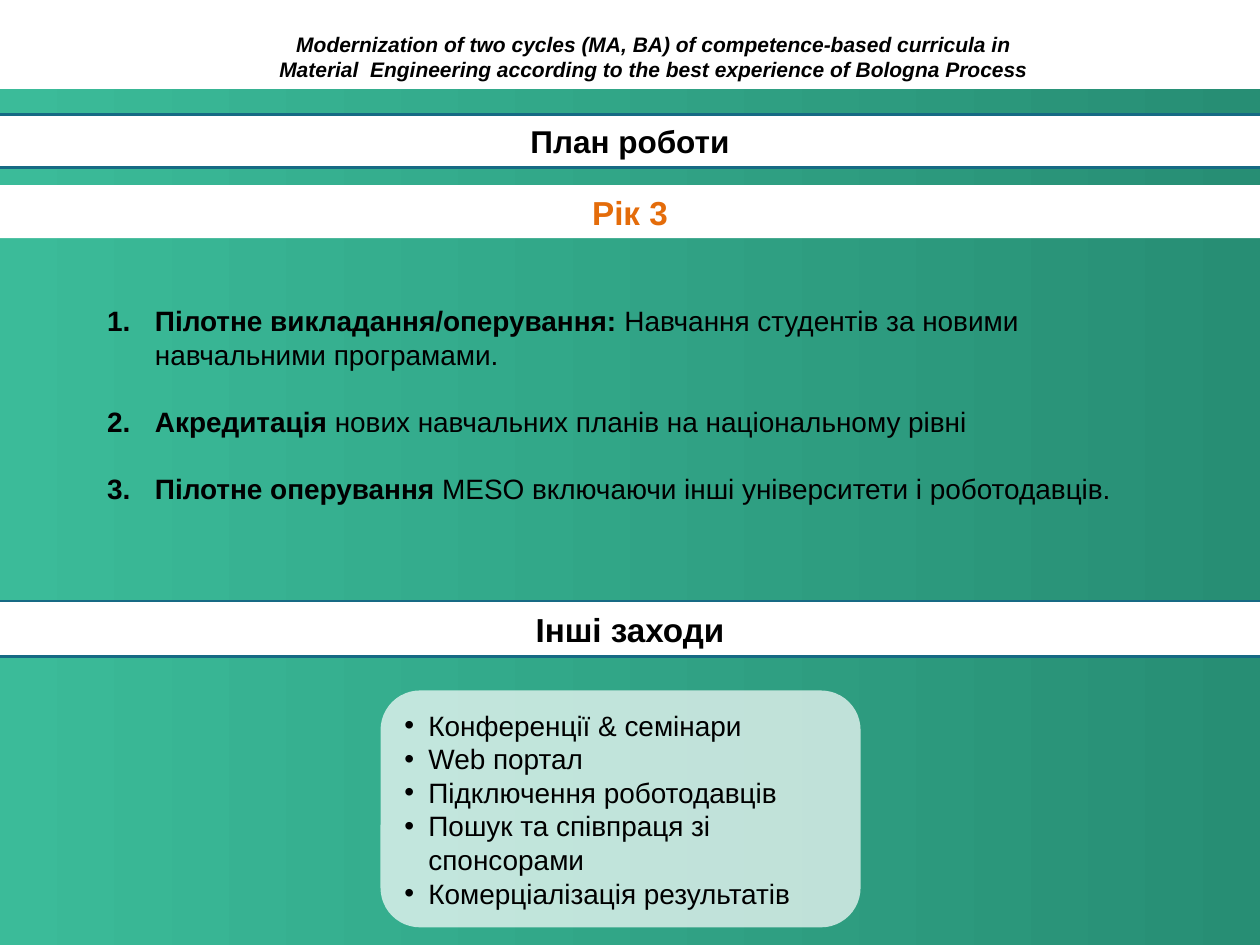
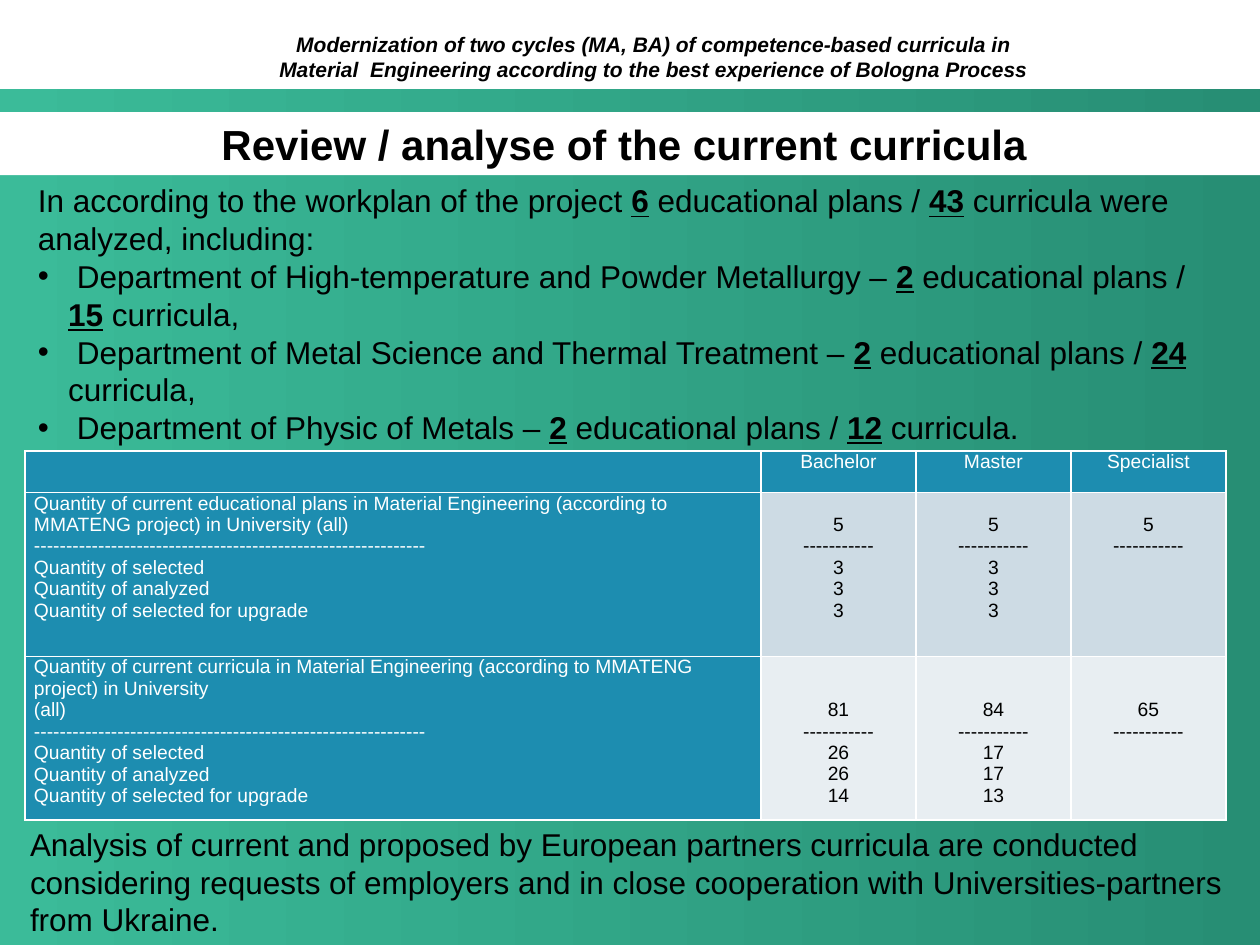
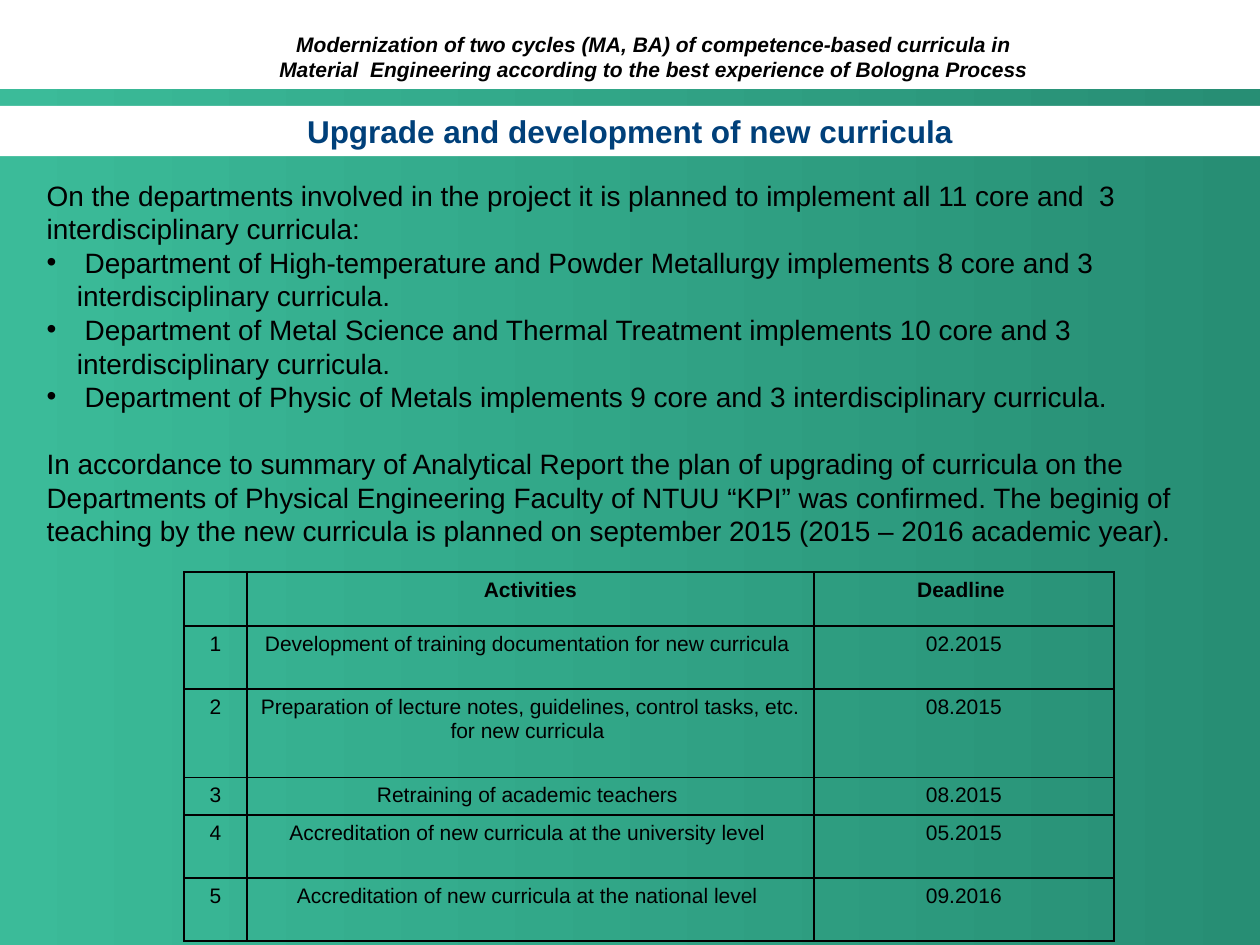
"""Builds three project slides about curricula in Material Engineering."""
from lxml import etree
from pptx import Presentation
from pptx.dml.color import RGBColor
from pptx.enum.shapes import MSO_SHAPE
from pptx.enum.text import MSO_ANCHOR, MSO_AUTO_SIZE, PP_ALIGN
from pptx.oxml.ns import qn
from pptx.util import Inches, Pt

RECTANGLE, ROUNDED = MSO_SHAPE.RECTANGLE, MSO_SHAPE.ROUNDED_RECTANGLE
LEFT, CENTER = PP_ALIGN.LEFT, PP_ALIGN.CENTER
TOP, MIDDLE = MSO_ANCHOR.TOP, MSO_ANCHOR.MIDDLE
NO_AUTOFIT = MSO_AUTO_SIZE.NONE
FONT = "Arial"
COLUMNS, ROWS = 100, 75
BLACK, WHITE, NAVY, ORANGE = "000000", "FFFFFF", "00407A", "E46C0A"
GREEN_START, GREEN_END, RULE = "3BBB99", "278E74", "166A84"
TABLE_BLUE, TABLE_GREY, TABLE_PALE = "1D8DB0", "CDDBE4", "E8EEF2"
PROJECT = ("Modernization of two cycles (MA, BA) of competence-based curricula in "
           "Material  Engineering according to the best experience of Bologna Process")
BULLETS = {"•": ("a:buChar", {"char": "•"}),
           "#": ("a:buAutoNum", {"type": "arabicPeriod"})}


def paint(color_holder, color):
    """Give a fill or a font colour its hex value."""
    if hasattr(color_holder, "solid"):
        color_holder.solid()
        color_holder = color_holder.fore_color
    color_holder.rgb = RGBColor.from_string(color)


def add_bullet(paragraph, mark, indent):
    """Set the bullet and hanging indent that belong to a mark."""
    properties = paragraph._p.get_or_add_pPr()
    hanging = Inches(indent) if mark else 0
    properties.set("marL", str(hanging))
    properties.set("indent", str(-hanging))
    if mark:
        etree.SubElement(properties, qn("a:buFont"), typeface=FONT)
    tag, attributes = BULLETS.get(mark, ("a:buNone", {}))
    etree.SubElement(properties, qn(tag), attributes)


def write(frame, paragraphs, size=16, color=BLACK, bold=False, italic=False,
          underline=False, align=LEFT, anchor=TOP, indent=0.24, gaps=None):
    """Write paragraphs; a leading • or # makes a list, *stars* mark emphasis."""
    frame.word_wrap = True
    frame.vertical_anchor = anchor
    for index, text in enumerate(paragraphs):
        paragraph = frame.paragraphs[0] if index == 0 else frame.add_paragraph()
        mark = text[:1] if text[:1] in BULLETS else ""
        add_bullet(paragraph, mark, indent)
        paragraph.alignment = align
        paragraph.space_before = Pt((gaps or {}).get(index, 0))
        for part, words in enumerate(text[len(mark):].split("*")):
            if not words:
                continue
            run = paragraph.add_run()
            run.text = words
            run.font.name, run.font.size = FONT, Pt(size)
            run.font.bold = bold or part % 2 == 1
            run.font.italic = italic
            run.font.underline = underline and part % 2 == 1
            paint(run.font.color, color)


def set_borders(cell, color):
    """Draw one-point lines round a cell."""
    properties = cell._tc.get_or_add_tcPr()
    for position, side in enumerate(("a:lnL", "a:lnR", "a:lnT", "a:lnB")):
        line = etree.Element(qn(side), w=str(Pt(1)))
        fill = etree.SubElement(line, qn("a:solidFill"))
        etree.SubElement(fill, qn("a:srgbClr"), val=color)
        properties.insert(position, line)


class Deck:
    """Holds the presentation style and the current slide."""

    def __init__(self):
        """Set the slide size and put the shared backdrop on the layout."""
        self.presentation = Presentation()
        self.presentation.slide_width = Inches(10)
        self.presentation.slide_height = Inches(7.5)
        self.layout = self.presentation.slide_layouts[1]
        self.new_slide()
        self.add_backdrop()

    def new_slide(self):
        """Start a slide."""
        self.slide = self.presentation.slides.add_slide(self.layout)

    def grid(self, left, top, width, height):
        """Turn grid columns and rows into lengths."""
        column = self.presentation.slide_width / COLUMNS
        row = self.presentation.slide_height / ROWS
        return [int(left * column), int(top * row), int(width * column), int(height * row)]

    def add_backdrop(self):
        """Move the green field and the project name to the layout."""
        field = self.shape((0, 7.1, 100, 68.1))
        field.fill.gradient()
        field.fill.gradient_angle = 0
        for stop, color in zip(field.fill.gradient_stops, (GREEN_START, GREEN_END)):
            paint(stop.color, color)
        header = self.text((20.1, 2, 63.6, 5.1), [PROJECT], size=12, bold=True,
                           italic=True, align=CENTER)
        for position, shape in enumerate((field, header), start=2):
            self.layout.shapes.element.insert(position, shape.element)

    def shape(self, area, kind=RECTANGLE, fill=WHITE, opacity=None):
        """Add a plain filled shape."""
        shape = self.slide.shapes.add_shape(kind, *self.grid(*area))
        shape.shadow.inherit = False
        paint(shape.fill, fill)
        shape.line.fill.background()
        if opacity:
            color = shape.fill._xPr.find(".//" + qn("a:srgbClr"))
            etree.SubElement(color, qn("a:alpha"), val=str(opacity * 1000))
        return shape

    def text(self, area, paragraphs, **style):
        """Add a text box."""
        box = self.slide.shapes.add_textbox(*self.grid(*area))
        write(box.text_frame, paragraphs, **style)
        return box

    def placeholder(self, index, area, paragraphs, **style):
        """Move a template placeholder and write in it."""
        shape = self.slide.placeholders[index]
        shape.left, shape.top, shape.width, shape.height = self.grid(*area)
        shape.text_frame.auto_size = NO_AUTOFIT
        write(shape.text_frame, paragraphs, **style)
        return shape

    def body(self, area, paragraphs, **style):
        """Fill the body placeholder."""
        self.placeholder(1, area, paragraphs, **style)

    def title(self, area, text, ruled=False, **style):
        """Fill the title placeholder as a white band."""
        band = self.placeholder(0, area, [text], bold=True, align=CENTER,
                                anchor=MIDDLE, **style)
        paint(band.fill, WHITE)
        self.rule(band, ruled)

    def band(self, area, text, ruled=False, **style):
        """Add a white heading band."""
        band = self.shape(area)
        write(band.text_frame, [text], bold=True, align=CENTER, anchor=MIDDLE, **style)
        self.rule(band, ruled)

    def rule(self, band, ruled):
        """Outline a band if it is ruled."""
        if ruled:
            paint(band.line.fill, RULE)
            band.line.width = Pt(1.5)

    def table(self, area, widths, heights, border):
        """Add an unstyled table and return it."""
        frame = self.slide.shapes.add_table(len(heights), len(widths), *self.grid(*area))
        table = frame.table
        table.first_row = table.horz_banding = False
        for column, width in zip(table.columns, widths):
            column.width = self.grid(width, 0, 0, 0)[0]
        for row, height in zip(table.rows, heights):
            row.height = self.grid(0, height, 0, 0)[1]
        for cell in table.iter_cells():
            cell.fill.background()
            set_borders(cell, border)
        return table


def add_work_plan(deck):
    """Build the work plan slide."""
    deck.title((-2, 9.1, 104, 4.2), "План роботи", ruled=True, size=18)
    deck.band((0, 14.7, 100, 4.2), "Рік 3", size=19, color=ORANGE)
    deck.body((7.5, 23.6, 86.6, 17.1), [
        "#*Пілотне викладання/оперування: *Навчання студентів за новими навчальними програмами.",
        "#*Акредитація *нових навчальних планів на національному рівні",
        "#*Пілотне оперування *MESO включаючи інші університети і роботодавців.",
    ], indent=0.38, gaps={1: 19.2, 2: 19.2})
    deck.band((-2, 47.7, 104, 4.4), "Інші заходи", ruled=True, size=19)
    events = deck.shape((30.2, 54.8, 38.1, 18.8), ROUNDED, opacity=70)
    write(events.text_frame, [
        "•Конференції & семінари", "•Web портал", "•Підключення роботодавців",
        "•Пошук та співпраця зі спонсорами", "•Комерціалізація результатів",
    ], anchor=MIDDLE, indent=0.19)


def add_review(deck):
    """Build the review slide with the quantity table."""
    deck.title((0, 8.9, 100, 5), "Review / analyse of the current curricula ", size=24)
    departments = [("High-temperature and Powder Metallurgy", 2, 15, ","),
                   ("Metal Science and Thermal Treatment", 2, 24, ","),
                   ("Physic of Metals", 2, 12, ".")]
    deck.body((2, 13.9, 95.3, 22), [
        "In according to the workplan of the project *6* educational plans / *43* "
        "curricula were analyzed, including:",
        *(f"• Department of {name} – *{plans}* educational plans / *{curricula}* curricula{end}"
          for name, plans, curricula, end in departments),
    ], size=18, underline=True, anchor=MIDDLE)
    deck.text((1.4, 64.9, 97.3, 10.1), [
        "Analysis of current and proposed by European partners curricula are conducted "
        "considering requests of employers and in close cooperation with "
        "Universities-partners from Ukraine."], size=18, anchor=MIDDLE)

    dashes, short_dashes = "-" * 61, "-" * 11
    steps = ["Quantity of selected", "Quantity of analyzed", "Quantity of selected for upgrade"]
    rows = [
        (TABLE_BLUE, 0, [[], ["Bachelor"], ["Master"], ["Specialist"]]),
        (TABLE_GREY, 1, [
            ["Quantity of current educational plans in Material Engineering (according to "
             "MMATENG project) in University (all)", dashes, *steps],
            ["5", short_dashes, "3", "3", "3"],
            ["5", short_dashes, "3", "3", "3"],
            ["5", short_dashes]]),
        (TABLE_PALE, 2, [
            ["Quantity of current curricula in Material Engineering (according to "
             "MMATENG project) in University", "(all)", dashes, *steps],
            ["81", short_dashes, "26", "26", "14"],
            ["84", short_dashes, "17", "17", "13"],
            ["65", short_dashes]]),
    ]
    table = deck.table((2, 35.8, 95.3, 29.3), [58.4, 12.3, 12.3, 12.3], [3.3, 13, 13], WHITE)
    for row, (fill, skipped_lines, texts) in enumerate(rows):
        for column, paragraphs in enumerate(texts):
            cell = table.cell(row, column)
            heading = row == 0 or column == 0
            cell.margin_left = cell.margin_right = Inches(0.07)
            cell.margin_top = Inches(0.17 * skipped_lines) if column else 0
            cell.margin_bottom = 0
            paint(cell.fill, TABLE_BLUE if heading else fill)
            write(cell.text_frame, paragraphs, size=11, color=WHITE if heading else BLACK,
                  align=CENTER if column else LEFT)


def add_upgrade(deck):
    """Build the upgrade slide with the deadline table."""
    deck.title((0, 8.4, 100, 4), "Upgrade and development of new curricula", size=18, color=NAVY)
    departments = [("High-temperature and Powder Metallurgy", 8),
                   ("Metal Science and Thermal Treatment", 10),
                   ("Physic of Metals", 9)]
    deck.body((2.7, 13.5, 94.5, 30.6), [
        "On the departments involved in the project it is planned to implement all 11 core "
        "and  3 interdisciplinary curricula:",
        *(f"• Department of {name} implements {core} core and 3 interdisciplinary curricula."
          for name, core in departments),
        "In accordance to summary of Analytical Report the plan of upgrading of curricula on "
        "the Departments of Physical Engineering Faculty of NTUU “KPI” was confirmed. The "
        "beginig of teaching by the new curricula is planned on september 2015 "
        "(2015 – 2016 academic year).",
    ], anchor=MIDDLE, gaps={4: 19.2})
    activities = [
        ("Development of training documentation for new curricula ", "02.2015"),
        ("Preparation of lecture notes, guidelines, control tasks, etc. for new curricula ",
         "08.2015"),
        ("Retraining of academic teachers ", "08.2015"),
        ("Accreditation of new curricula at the university level ", "05.2015"),
        ("Accreditation of new curricula at the national level ", "09.2016"),
    ]
    rows = [("", "Activities", "Deadline ")]
    rows += [(str(number), *activity) for number, activity in enumerate(activities, start=1)]
    table = deck.table((14.6, 45.4, 73.8, 29.3), [5, 45, 23.8], [4.3, 5, 7, 3, 5, 5], BLACK)
    for row, texts in enumerate(rows):
        for column, text in enumerate(texts):
            write(table.cell(row, column).text_frame, [text], size=12, bold=row == 0,
                  align=CENTER)


def main():
    """Build and save the presentation."""
    deck = Deck()
    add_work_plan(deck)
    deck.new_slide()
    add_review(deck)
    deck.new_slide()
    add_upgrade(deck)
    deck.presentation.save("out.pptx")


if __name__ == "__main__":
    main()
